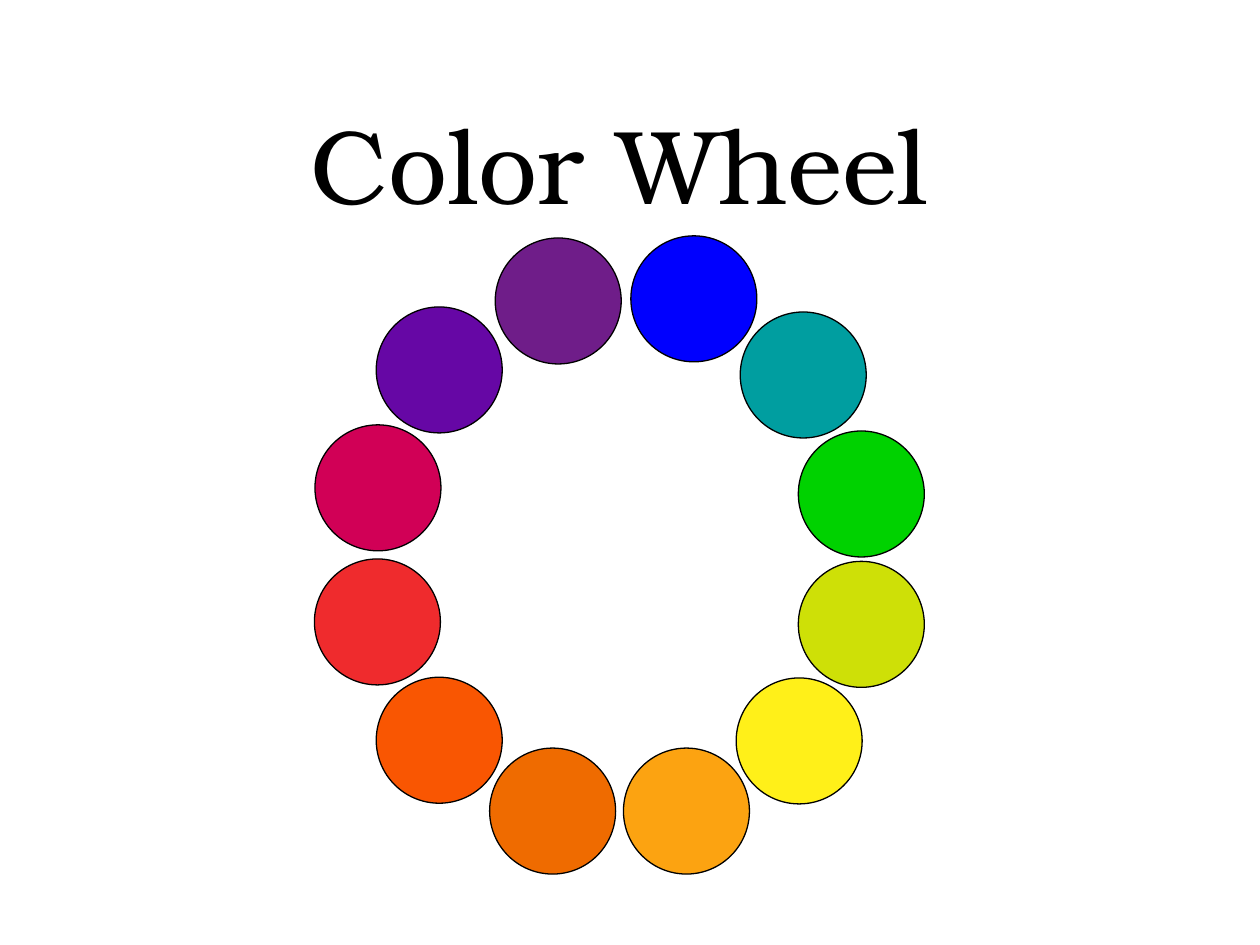
from pptx import Presentation
from pptx.dml import color
from pptx.enum import shapes, text
from pptx.util import Pt


def rgb(value):
    return color.RGBColor.from_string(value)


prs = Presentation()
prs.slide_width, prs.slide_height = Pt(720), Pt(540)
s = prs.slides.add_slide(prs.slide_layouts[6])
wheel = s.shapes.add_group_shape()

diameter = 72
circles = [
    (283, 136, "6F1D89"),
    (360.5, 134.8, "0000FF"),
    (423, 178.3, "009EA0"),
    (456.2, 246.3, "00D200"),
    (456.2, 320.8, "CEE007"),
    (420.7, 387.4, "FFF019"),
    (215, 175.4, "6607A5"),
    (180, 242.8, "D10056"),
    (179.7, 319.4, "EF2B2D"),
    (215, 387, "F95602"),
    (279.8, 427.5, "EF6B00"),
    (356.3, 427.5, "FCA311"),
]
for x, y, fill in circles:
    sp = wheel.shapes.add_shape(
        shapes.MSO_SHAPE.OVAL, Pt(x), Pt(y), Pt(diameter), Pt(diameter))
    sp.shadow.inherit = False
    sp.fill.solid()
    sp.fill.fore_color.rgb = rgb(fill)
    sp.line.color.rgb = rgb("000000")
    sp.line.width = Pt(0.75)

title = wheel.shapes.add_textbox(Pt(120), Pt(54), Pt(468), Pt(81))
tf = title.text_frame
frame_format = {
    "word_wrap": True,
    "vertical_anchor": text.MSO_ANCHOR.TOP,
    "margin_left": Pt(3),
    "margin_right": Pt(3),
    "margin_top": Pt(3),
    "margin_bottom": Pt(3),
}
for name, value in frame_format.items():
    setattr(tf, name, value)
p = tf.paragraphs[0]
p.alignment = text.PP_ALIGN.CENTER
r = p.add_run()
r.text = "Color Wheel"
for name, value in {"name": "TeX Gyre Bonum", "size": Pt(60)}.items():
    setattr(r.font, name, value)
r.font.color.rgb = rgb("000000")

prs.save("out.pptx")
